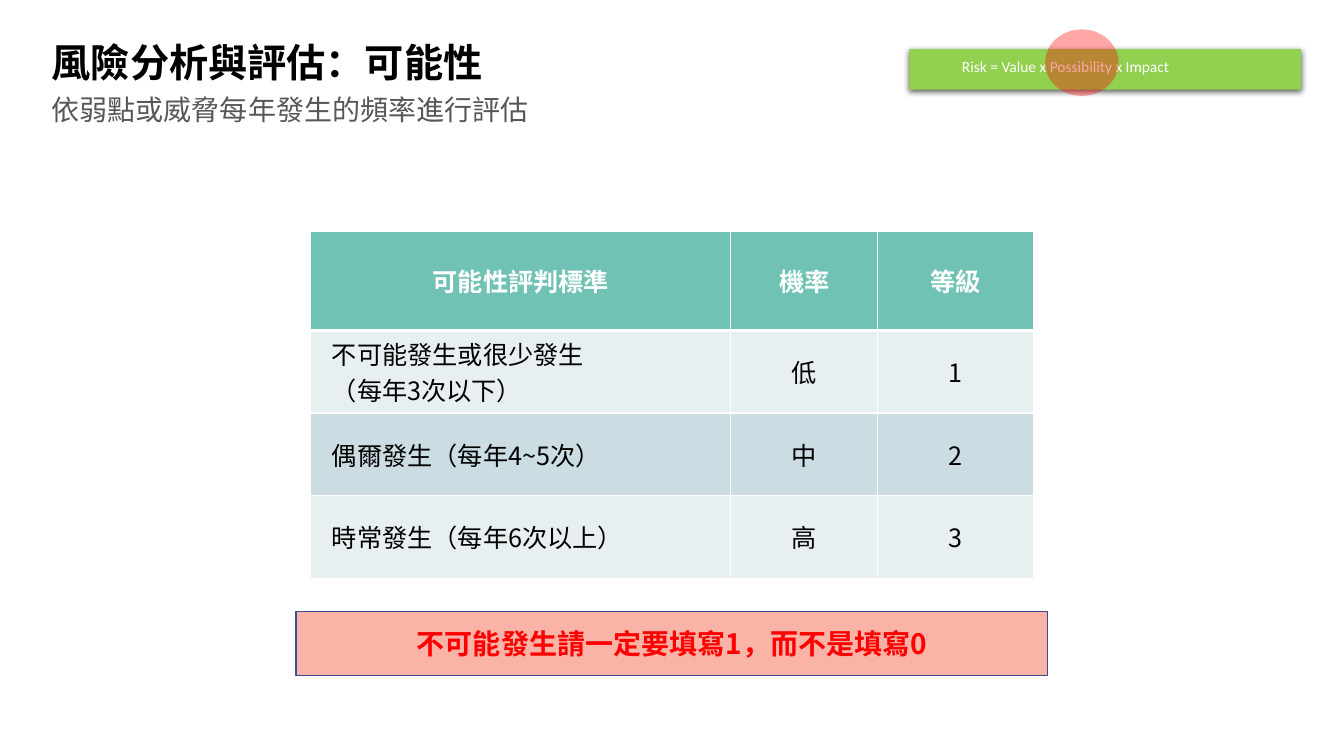
from lxml.etree import SubElement
from pptx import Presentation
from pptx.dml.color import RGBColor
from pptx.enum.shapes import MSO_SHAPE as Shape
from pptx.enum.text import MSO_ANCHOR as Anchor, PP_ALIGN as Align
from pptx.oxml import parse_xml
from pptx.oxml.ns import nsdecls, qn
from pptx.util import Pt

CJK = "Noto Sans CJK SC"
COLORS = {
    "white": "FFFFFF", "black": "000000", "gray": "575757", "red": "FF0000",
    "header": "6FC2B4", "light": "E7EFF1", "dark": "CBDDE2",
    "green": "92D050", "salmon": "F9B3A7", "navy": "3A4C94",
}
CRITERIA = [
    ("可能性評判標準", "機率", "等級"),
    ("不可能發生或很少發生\n（每年3次以下）", "低", "1"),
    ("偶爾發生（每年4~5次）", "中", "2"),
    ("時常發生（每年6次以上）", "高", "3"),
]


def color(name):
    return RGBColor.from_string(COLORS[name])


def write(frame, text, size=18, ink="black", bold=False, font=CJK,
          align=Align.LEFT, anchor=Anchor.TOP, spacing=None, margins=(0, 0), wrap=True):
    frame.word_wrap = wrap
    frame.vertical_anchor = anchor
    frame.margin_left = frame.margin_right = Pt(margins[0])
    frame.margin_top = frame.margin_bottom = Pt(margins[1])
    for index, line in enumerate(text.split("\n")):
        paragraph = frame.add_paragraph() if index else frame.paragraphs[0]
        paragraph.alignment = align
        if spacing:
            paragraph.line_spacing = spacing
        run = paragraph.add_run()
        run.text = line
        run.font.size = Pt(size)
        run.font.bold = bold
        run.font.color.rgb = color(ink)
        run.font.name = font
        latin = run._r.rPr.find(qn("a:latin"))
        latin.addnext(parse_xml(f'<a:ea {nsdecls("a")} typeface="{font}"/>'))


def add_text(slide, box, text, **style):
    shape = slide.shapes.add_textbox(*map(Pt, box))
    write(shape.text_frame, text, **style)


def add_block(slide, kind, box, fill, line=None, alpha=None):
    shape = slide.shapes.add_shape(kind, *map(Pt, box))
    shape.shadow.inherit = False
    shape.fill.solid()
    shape.fill.fore_color.rgb = color(fill)
    if line:
        shape.line.color.rgb = color(line)
        shape.line.width = Pt(1)
    else:
        shape.line.fill.background()
    if alpha:
        fill_color = shape._element.spPr.find(qn("a:solidFill"))[0]
        SubElement(fill_color, qn("a:alpha"), val=str(alpha * 1000))
    return shape


def add_shadow(shape):
    effects = shape._element.spPr.find(qn("a:effectLst"))
    effects.append(parse_xml(
        f'<a:outerShdw {nsdecls("a")} blurRad="{Pt(4.5)}" dist="{Pt(1.5)}" dir="5400000" rotWithShape="0">'
        f'<a:srgbClr val="{COLORS["black"]}"><a:alpha val="63000"/></a:srgbClr></a:outerShdw>'))


def set_borders(cell, **widths):
    properties = cell._tc.get_or_add_tcPr()
    for index, side in enumerate("LRTB"):
        properties.insert(index, parse_xml(
            f'<a:ln{side} {nsdecls("a")} w="{Pt(widths.get(side, 1))}"><a:solidFill>'
            f'<a:srgbClr val="{COLORS["white"]}"/></a:solidFill></a:ln{side}>'))


def add_criteria_table(slide, left, top, widths, heights):
    frame = slide.shapes.add_table(len(heights), len(widths), Pt(left), Pt(top),
                                   Pt(sum(widths)), Pt(sum(heights)))
    table = frame.table
    for column, width in zip(table.columns, widths):
        column.width = Pt(width)
    for row, height in zip(table.rows, heights):
        row.height = Pt(height)
    for r, texts in enumerate(CRITERIA):
        header = r == 0
        for c, text in enumerate(texts):
            cell = table.cell(r, c)
            cell.fill.solid()
            cell.fill.fore_color.rgb = color("header" if header else "light" if r % 2 else "dark")
            write(cell.text_frame, text, ink="white" if header else "black", bold=header,
                  align=Align.CENTER if header or c else Align.LEFT)
            cell.vertical_anchor = Anchor.MIDDLE
            cell.margin_left = cell.margin_right = Pt(15)
            cell.margin_top = cell.margin_bottom = 0
            set_borders(cell, T=3 if r == 1 else 1, B=3 if header else 1)


def main():
    presentation = Presentation()
    presentation.slide_width, presentation.slide_height = Pt(960), Pt(540)
    slide = presentation.slides.add_slide(presentation.slide_layouts[5])

    title = slide.shapes.title
    title.left, title.top, title.width, title.height = map(Pt, (37, 31.5, 311, 91))
    write(title.text_frame, "風險分析與評估：可能性", size=28, bold=True, spacing=0.9, wrap=False)

    add_criteria_table(slide, 222, 165, (300, 105, 111), (71, 59, 59, 59))

    add_shadow(add_block(slide, Shape.RECTANGLE, (649.5, 35, 280, 29), "green"))
    add_text(slide, (680, 37.5, 240, 21), "Risk = Value x Possibility x Impact",
             size=11, ink="white", font="Calibri", margins=(7.2, 3.6))
    add_block(slide, Shape.OVAL, (746.5, 21, 52.5, 47.5), "red", alpha=35)

    add_text(slide, (37, 68.5, 886, 60), "依弱點或威脅每年發生的頻率進行評估",
             size=20, ink="gray", spacing=0.9)

    reminder = add_block(slide, Shape.RECTANGLE, (211.5, 437, 537, 45.5), "salmon", line="navy")
    write(reminder.text_frame, "不可能發生請一定要填寫1，而不是填寫0", size=20, ink="red", bold=True,
          align=Align.CENTER, anchor=Anchor.MIDDLE, margins=(7.2, 3.6))

    presentation.save("out.pptx")


if __name__ == "__main__":
    main()
